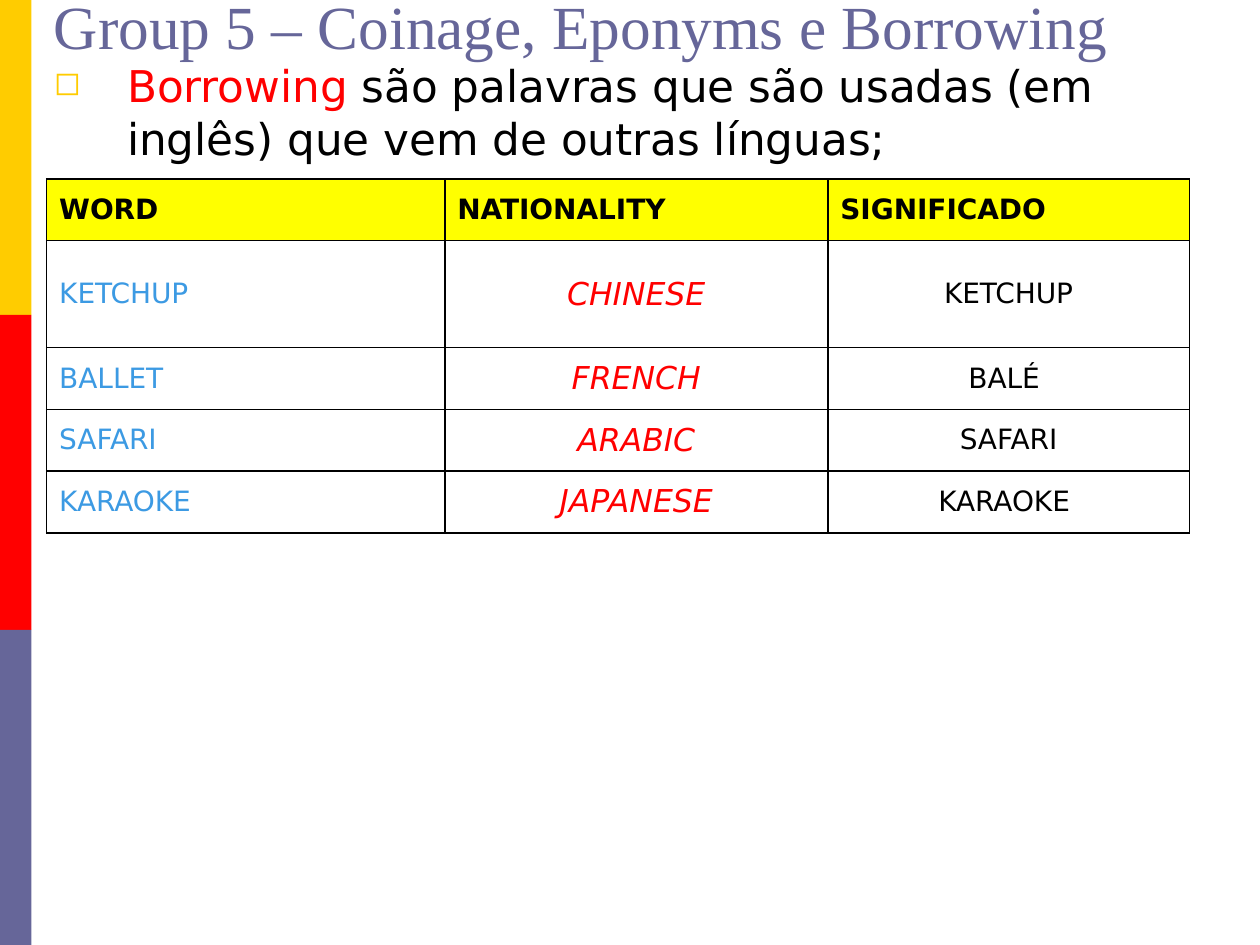
from typing import NamedTuple

from lxml import etree
from pptx import Presentation
from pptx.dml.color import RGBColor
from pptx.enum.shapes import MSO_SHAPE
from pptx.enum.text import MSO_ANCHOR, PP_ALIGN
from pptx.oxml.ns import qn
from pptx.util import Inches, Pt

RECT = MSO_SHAPE.RECTANGLE
LEFT, CENTER = PP_ALIGN.LEFT, PP_ALIGN.CENTER
TOP, MIDDLE, BOTTOM = MSO_ANCHOR.TOP, MSO_ANCHOR.MIDDLE, MSO_ANCHOR.BOTTOM
SANS, SERIF = "DejaVu Sans", "Times New Roman"
GOLD, RED, SLATE = "FFCC00", "FF0000", "666699"
BLACK, WHITE, YELLOW, BLUE = "000000", "FFFFFF", "FFFF00", "3C9AE3"
BAND_HEIGHT = 2.5


class CellStyle(NamedTuple):
    color: str
    size: float = 16
    align: PP_ALIGN = CENTER
    bold: bool = False
    italic: bool = False
    fill: str = WHITE


HEADER = CellStyle(BLACK, align=LEFT, bold=True, fill=YELLOW)
COLUMN_STYLES = [
    CellStyle(BLUE, align=LEFT),
    CellStyle(RED, size=18, italic=True),
    CellStyle(BLACK),
]
COLUMN_WIDTHS = [3.16, 3.04, 2.87]
ROW_HEIGHTS = [0.49, 0.85, 0.49, 0.49, 0.49]
ROWS = [
    ("WORD", "NATIONALITY", "SIGNIFICADO"),
    ("KETCHUP", "CHINESE", "KETCHUP"),
    ("BALLET", "FRENCH", "BALÉ "),
    ("SAFARI", "ARABIC", "SAFARI"),
    ("KARAOKE", "JAPANESE", "KARAOKE "),
]


def rgb(color: str) -> RGBColor:
    return RGBColor.from_string(color)


def add_run(p, text: str, *, size: float, color: str, font: str = SANS,
            bold: bool = False, italic: bool = False) -> None:
    r = p.add_run()
    r.text = text
    r.font.name = font
    r.font.size = Pt(size)
    r.font.bold = bold
    r.font.italic = italic
    r.font.color.rgb = rgb(color)


def add_band(slide, top: float, color: str) -> None:
    sp = slide.shapes.add_shape(
        RECT, 0, Inches(top), Inches(0.25), Inches(BAND_HEIGHT))
    sp.shadow.inherit = False
    sp.fill.solid()
    sp.fill.fore_color.rgb = rgb(color)
    sp.line.fill.background()


def add_paragraph_box(slide, left: float, top: float, width: float,
                      height: float, anchor: MSO_ANCHOR):
    """Add a wrapping text box and return its first paragraph."""
    box = slide.shapes.add_textbox(
        Inches(left), Inches(top), Inches(width), Inches(height))
    tf = box.text_frame
    tf.word_wrap = True
    tf.vertical_anchor = anchor
    return tf.paragraphs[0]


def set_bullet(p, char: str, color: str, percent: int, indent: float) -> None:
    pPr = p._p.get_or_add_pPr()
    pPr.set("marL", str(Inches(indent)))
    pPr.set("indent", str(-Inches(indent)))
    bu_color = etree.SubElement(pPr, qn("a:buClr"))
    etree.SubElement(bu_color, qn("a:srgbClr"), val=color)
    etree.SubElement(pPr, qn("a:buSzPct"), val=str(percent * 1000))
    etree.SubElement(pPr, qn("a:buChar"), char=char)


def set_borders(cell, color: str, width: float) -> None:
    tcPr = cell._tc.get_or_add_tcPr()
    for i, side in enumerate(("lnL", "lnR", "lnT", "lnB")):
        ln = etree.Element(qn(f"a:{side}"), w=str(Pt(width)))
        fill = etree.SubElement(ln, qn("a:solidFill"))
        etree.SubElement(fill, qn("a:srgbClr"), val=color)
        tcPr.insert(i, ln)


def fill_cell(cell, text: str, style: CellStyle) -> None:
    cell.vertical_anchor = MIDDLE
    cell.fill.solid()
    cell.fill.fore_color.rgb = rgb(style.fill)
    set_borders(cell, BLACK, 1)
    p = cell.text_frame.paragraphs[0]
    p.alignment = style.align
    add_run(p, text, size=style.size, color=style.color,
            bold=style.bold, italic=style.italic)


def add_word_table(slide, left: float, top: float) -> None:
    table = slide.shapes.add_table(
        len(ROWS), len(COLUMN_WIDTHS), Inches(left), Inches(top),
        Inches(sum(COLUMN_WIDTHS)), Inches(sum(ROW_HEIGHTS))).table
    for column, width in zip(table.columns, COLUMN_WIDTHS):
        column.width = Inches(width)
    for i, (words, height) in enumerate(zip(ROWS, ROW_HEIGHTS)):
        table.rows[i].height = Inches(height)
        for j, (word, style) in enumerate(zip(words, COLUMN_STYLES)):
            fill_cell(table.cell(i, j), word, HEADER if i == 0 else style)


def main() -> None:
    prs = Presentation()
    prs.slide_width, prs.slide_height = Inches(10), Inches(7.5)
    slide = prs.slides.add_slide(prs.slide_layouts[6])

    for i, color in enumerate((GOLD, RED, SLATE)):
        add_band(slide, i * BAND_HEIGHT, color)

    title = add_paragraph_box(slide, 0.33, 0.01, 9, 0.53, BOTTOM)
    add_run(title, "Group 5 – Coinage, Eponyms e Borrowing",
            size=35, color=SLATE, font=SERIF)

    body = add_paragraph_box(slide, 0.33, 0.42, 9.25, 1, TOP)
    set_bullet(body, "◻", GOLD, 75, 0.58)
    add_run(body, "Borrowing ", size=25, color=RED)
    add_run(body, "são palavras que são usadas (em inglês) que vem de outras línguas;",
            size=25, color=BLACK)

    add_word_table(slide, 0.37, 1.42)
    prs.save("out.pptx")


if __name__ == "__main__":
    main()
